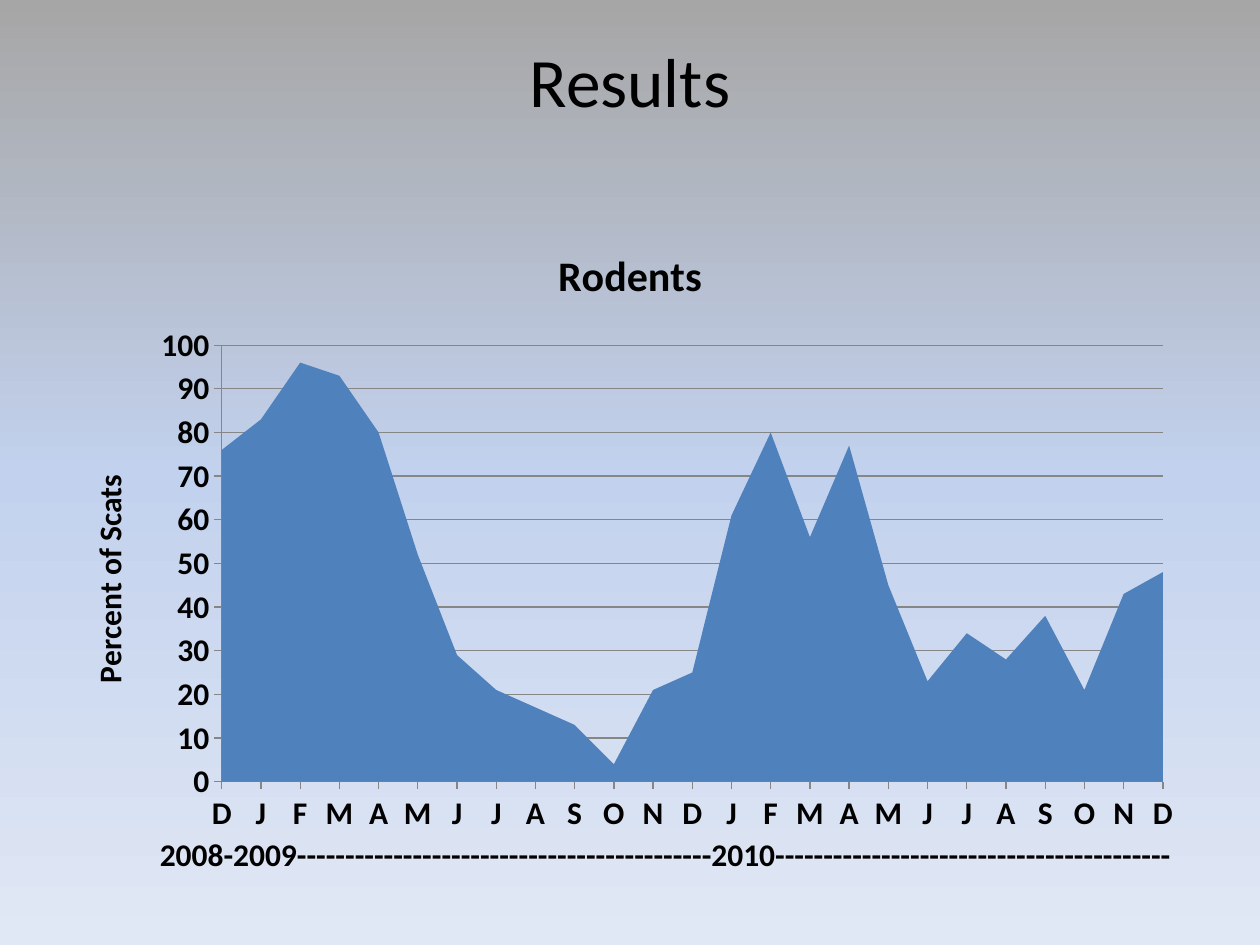
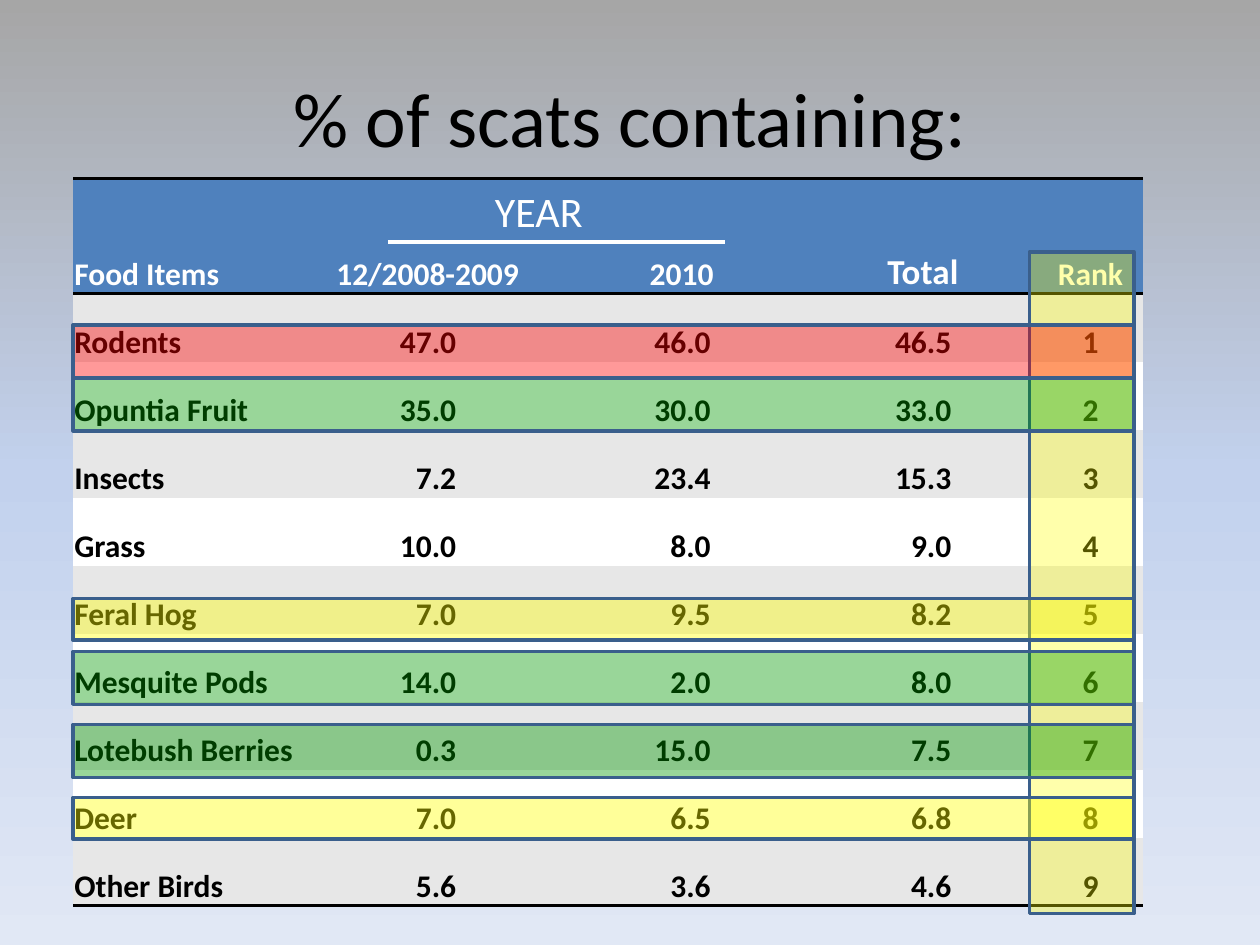
from copy import deepcopy
from typing import NamedTuple

from lxml import etree
from pptx import Presentation
from pptx.chart.data import CategoryChartData
from pptx.dml.color import RGBColor
from pptx.enum import chart as ch, shapes, text
from pptx.oxml import parse_xml
from pptx.oxml.ns import nsdecls, qn
from pptx.util import Inches, Pt

FONT = "Calibri"
BLACK, WHITE, BLUE = "000000", "FFFFFF", "4F81BD"
BAND, GRID, OUTLINE = "E7E7E7", "868686", "3A5F8C"
RED, GREEN, YELLOW = "FF0000", "009900", "FFFF00"
BACKGROUND = [(0, "A6A6A6"), (0.5, "C2D1ED"), (1, "E1E8F5")]
NO_STYLE = "{2D5ABB26-0587-4C30-8999-92F81FD0307C}"
LEFT, CENTER, RIGHT = text.PP_ALIGN.LEFT, text.PP_ALIGN.CENTER, text.PP_ALIGN.RIGHT

MONTHS = "DJFMAMJJASONDJFMAMJJASOND"
RODENTS = [76, 83, 96, 93, 80, 52, 29, 21, 17, 13, 4, 21, 25,
           61, 80, 56, 77, 45, 23, 34, 28, 38, 21, 43, 48]
YEARS = ("2008-2009-------------------------------------------2010"
         "-----------------------------------------")

HEADERS = ["Food Items", "12/2008-2009", "2010", "Total", "Rank"]
FOODS = [
    ("Rodents", "47.0", "46.0", "46.5"),
    ("Opuntia Fruit", "35.0", "30.0", "33.0"),
    ("Insects", "7.2", "23.4", "15.3"),
    ("Grass", "10.0", "8.0", "9.0"),
    ("Feral Hog", "7.0", "9.5", "8.2"),
    ("Mesquite Pods", "14.0", "2.0", "8.0"),
    ("Lotebush Berries", "0.3", "15.0", "7.5"),
    ("Deer", "7.0", "6.5", "6.8"),
    ("Other Birds", "5.6", "3.6", "4.6"),
]


class Column(NamedTuple):
    width: float
    align: text.PP_ALIGN
    right_margin: float = 0.01


COLUMNS = [Column(1.8, LEFT), Column(2.03, RIGHT, 0.79), Column(2, RIGHT, 0.77),
           Column(1.83, RIGHT, 0.69), Column(0.83, CENTER)]


class Highlight(NamedTuple):
    top: float
    height: float
    color: str
    left: float = 0.58
    width: float = 8.42
    opacity: int = 40


HIGHLIGHTS = [
    Highlight(2, 5.25, YELLOW, left=8.17, width=0.83, opacity=33),
    Highlight(2.58, 0.42, RED),
    Highlight(3, 0.42, GREEN),
    Highlight(5.17, 0.42, GREEN),
    Highlight(5.75, 0.42, GREEN),
    Highlight(4.75, 0.33, YELLOW),
    Highlight(6.33, 0.33, YELLOW),
]


def rgb(color: str) -> RGBColor:
    return RGBColor.from_string(color)


def format_font(font, size: float, color: str = BLACK, bold: bool = False) -> None:
    font.name, font.size, font.bold = FONT, Pt(size), bold
    font.color.rgb = rgb(color)


def write(tf, words: str, *, size: float, color: str = BLACK, bold: bool = False,
          align: text.PP_ALIGN = LEFT) -> None:
    p = tf.paragraphs[0]
    p.alignment = align
    r = p.add_run()
    r.text = words
    format_font(r.font, size, color, bold)


def set_background(master) -> None:
    fill = master.background.fill
    fill.gradient()
    fill.gradient_angle = 270
    stops = master.element.find(".//" + qn("a:gsLst"))
    stops.append(deepcopy(stops[-1]))
    for stop, (position, color) in zip(fill.gradient_stops, BACKGROUND):
        stop.position = position
        stop.color.rgb = rgb(color)


def add_titled_slide(prs, title: str, size: float, anchor: text.MSO_ANCHOR):
    s = prs.slides.add_slide(prs.slide_layouts[5])
    sp = s.shapes.title
    sp.left, sp.top, sp.width, sp.height = map(Inches, (0.5, 0.3, 9, 1.25))
    tf = sp.text_frame
    tf.vertical_anchor = anchor
    tf.margin_top = tf.margin_bottom = 0
    write(tf, title, size=size, align=CENTER)
    return s


def add_text(s, left: float, top: float, width: float, height: float,
             words: str, **style) -> None:
    tf = s.shapes.add_textbox(*map(Inches, (left, top, width, height))).text_frame
    tf.word_wrap = True
    write(tf, words, **style)


def set_plot_area(chart, x: float, y: float, w: float, h: float) -> None:
    """Fix the inner plot area as fractions of the chart."""
    plot_area = chart.element.find(".//" + qn("c:plotArea"))
    for old in plot_area.findall(qn("c:layout")):
        plot_area.remove(old)
    sizes = "".join(f'<c:{k} val="{v}"/>' for k, v in zip("xywh", (x, y, w, h)))
    plot_area.insert(0, parse_xml(
        f'<c:layout {nsdecls("c")}><c:manualLayout><c:layoutTarget val="inner"/>'
        f'<c:xMode val="edge"/><c:yMode val="edge"/>{sizes}'
        '</c:manualLayout></c:layout>'))


def add_rodent_chart(s) -> None:
    data = CategoryChartData()
    data.categories = list(MONTHS)
    data.add_series("Rodents", RODENTS)
    chart = s.shapes.add_chart(ch.XL_CHART_TYPE.AREA_STACKED,
                               *map(Inches, (0.5, 1.75, 9, 4.95)), data).chart
    format_font(chart.font, 10)
    chart.has_legend = False
    chart.has_title = True
    write(chart.chart_title.text_frame, "Rodents", size=24, bold=True)

    fill = chart.plots[0].series[0].format.fill
    fill.solid()
    fill.fore_color.rgb = rgb(BLUE)

    months, percent = chart.category_axis, chart.value_axis
    for axis in (months, percent):
        format_font(axis.tick_labels.font, 18, bold=True)
        axis.major_tick_mark = ch.XL_TICK_MARK.OUTSIDE
        axis.minor_tick_mark = ch.XL_TICK_MARK.NONE
        axis.format.line.color.rgb = rgb(GRID)
    months.has_major_gridlines = False
    percent.minimum_scale, percent.maximum_scale, percent.major_unit = 0, 100, 10
    percent.has_major_gridlines = True
    percent.major_gridlines.format.line.color.rgb = rgb(GRID)
    percent.has_title = True
    write(percent.axis_title.text_frame, "Percent of Scats", size=18, bold=True)
    chart.element.find(".//" + qn("c:crossBetween")).set("val", "midCat")
    set_plot_area(chart, 0.14, 0.2, 0.83, 0.7)


def add_borders(cell, *sides: str) -> None:
    """Draw black lines on the given sides, T before B."""
    for i, side in enumerate(sides):
        cell._tc.get_or_add_tcPr().insert(i, parse_xml(
            f'<a:ln{side} {nsdecls("a")} w="{Pt(2)}"><a:solidFill>'
            f'<a:srgbClr val="{BLACK}"/></a:solidFill></a:ln{side}>'))


def fill_cell(cell, words: str, fill: str, right_margin: float = 0.01, **style) -> None:
    cell.fill.solid()
    cell.fill.fore_color.rgb = rgb(fill)
    cell.vertical_anchor = text.MSO_ANCHOR.BOTTOM
    cell.margin_left = cell.margin_top = Inches(0.01)
    cell.margin_right, cell.margin_bottom = Inches(right_margin), 0
    write(cell.text_frame, words, bold=True, **style)


def add_food_table(s) -> None:
    frame = s.shapes.add_table(len(FOODS) + 1, len(COLUMNS),
                               *map(Inches, (0.58, 1.42, 8.5, 5.78)))
    frame.element.find(".//" + qn("a:tableStyleId")).text = NO_STYLE
    table = frame.table
    for i, row in enumerate(table.rows):
        row.height = Inches(0.54 if i else 0.91)
    for j, (column, header) in enumerate(zip(COLUMNS, HEADERS)):
        table.columns[j].width = Inches(column.width)
        cell = table.cell(0, j)
        fill_cell(cell, header, BLUE, color=WHITE, size=20 if header == "Total" else 18,
                  align=CENTER if j else LEFT)
        add_borders(cell, "T", "B")
        for rank, food in enumerate(FOODS, 1):
            fill_cell(table.cell(rank, j), (*food, str(rank))[j],
                      BAND if rank % 2 else WHITE, column.right_margin,
                      size=18, align=column.align)
        add_borders(table.cell(len(FOODS), j), "B")


def add_year_rule(s) -> None:
    line = s.shapes.add_connector(shapes.MSO_CONNECTOR.STRAIGHT,
                                  *map(Inches, (3.08, 1.92, 5.75, 1.92)))
    line.line.color.rgb = rgb(WHITE)
    line.line.width = Pt(2)
    etree.SubElement(line.element.spPr, qn("a:effectLst"))


def add_highlight(s, h: Highlight) -> None:
    sp = s.shapes.add_shape(shapes.MSO_SHAPE.RECTANGLE,
                            *map(Inches, (h.left, h.top, h.width, h.height)))
    sp.shadow.inherit = False
    sp.fill.solid()
    sp.fill.fore_color.rgb = rgb(h.color)
    color = sp.element.spPr.find(qn("a:solidFill")).find(qn("a:srgbClr"))
    etree.SubElement(color, qn("a:alpha")).set("val", str(h.opacity * 1000))
    sp.line.color.rgb = rgb(OUTLINE)
    sp.line.width = Pt(2)


def build_results(prs) -> None:
    s = add_titled_slide(prs, "Results", 39.6, text.MSO_ANCHOR.TOP)
    add_rodent_chart(s)
    add_text(s, 1.17, 6.58, 8.67, 0.4, YEARS, size=18, bold=True)


def build_scat_contents(prs) -> None:
    s = add_titled_slide(prs, "% of scats containing:", 44, text.MSO_ANCHOR.MIDDLE)
    add_food_table(s)
    add_text(s, 3.83, 1.42, 1.12, 0.51, "YEAR", size=24, color=WHITE)
    add_year_rule(s)
    for highlight in HIGHLIGHTS:
        add_highlight(s, highlight)


def main() -> None:
    prs = Presentation()
    prs.slide_width, prs.slide_height = Inches(10), Inches(7.5)
    set_background(prs.slide_master)
    build_results(prs)
    build_scat_contents(prs)
    prs.save("out.pptx")


if __name__ == "__main__":
    main()
